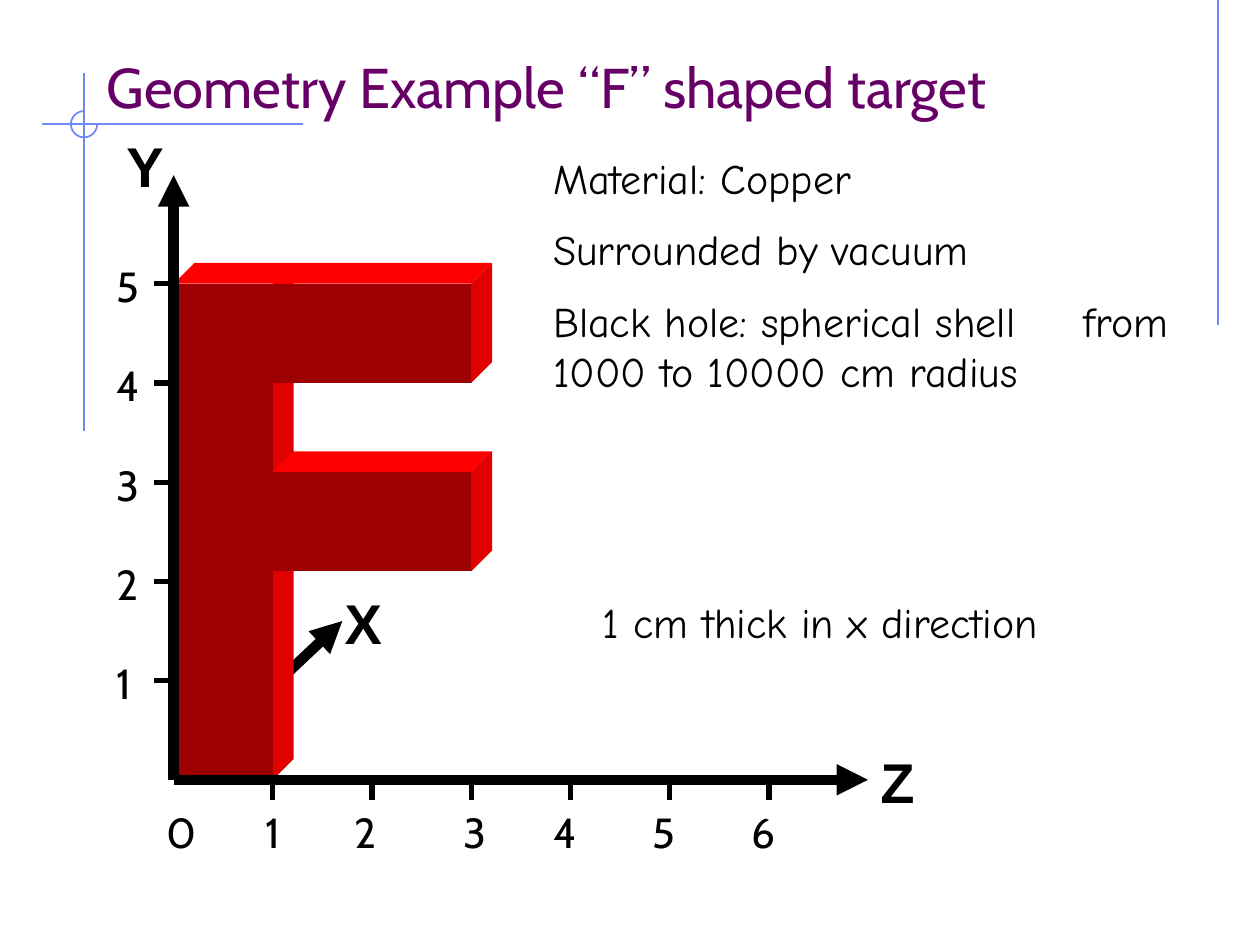
from lxml.etree import SubElement
from pptx import Presentation
from pptx.dml.color import RGBColor
from pptx.enum.shapes import MSO_CONNECTOR, MSO_SHAPE
from pptx.enum.text import MSO_ANCHOR, PP_ALIGN
from pptx.oxml.ns import qn
from pptx.util import Cm, Pt

BLACK = RGBColor(0x00, 0x00, 0x00)
PURPLE = RGBColor(0x66, 0x00, 0x66)
BLUE = RGBColor(0x6F, 0x89, 0xF7)
FRONT_RED = RGBColor(0x9C, 0x00, 0x00)
SIDE_RED = RGBColor(0xE0, 0x00, 0x00)
TOP_RED = RGBColor(0xFF, 0x00, 0x00)

# Axis system in cm: two slide centimetres per unit
ORIGIN_X, ORIGIN_Y = 3.5, 15.72
UNIT = 2
DEPTH = 0.42
TICK = 0.4


def add_line(slide, start, end, color, width, arrow=False):
    line = slide.shapes.add_connector(
        MSO_CONNECTOR.STRAIGHT, *(Cm(value) for value in (*start, *end)))
    line.line.color.rgb = color
    line.line.width = Pt(width)
    if arrow:
        SubElement(line.line._get_or_add_ln(), qn("a:tailEnd"), type="triangle")
    SubElement(line._element.spPr, qn("a:effectLst"))


def add_run(paragraph, text, font, size, color=BLACK, bold=False):
    run = paragraph.add_run()
    run.text = text
    run.font.name = font
    run.font.size = Pt(size)
    run.font.color.rgb = color
    run.font.bold = bold


def add_text(slide, box, lines, font, size, bold=False):
    shape = slide.shapes.add_textbox(*(Cm(value) for value in box))
    frame = shape.text_frame
    frame.word_wrap = True
    for index, text in enumerate(lines):
        paragraph = frame.paragraphs[0] if index == 0 else frame.add_paragraph()
        if index:
            paragraph.space_before = Pt(size / 2)
        add_run(paragraph, text, font, size, bold=bold)
    return frame


def add_face(slide, points, color):
    corners = [(Cm(x), Cm(y)) for x, y in points]
    builder = slide.shapes.build_freeform(*corners[0])
    builder.add_line_segments(corners[1:], close=True)
    shape = builder.convert_to_shape()
    shape.shadow.inherit = False
    shape.fill.solid()
    shape.fill.fore_color.rgb = color
    shape.line.fill.background()


def add_block(slide, z, y, width, height):
    """Draw a solid bar, given in axis units, with front, top and side faces."""
    left, right = (ORIGIN_X + UNIT * value for value in (z, z + width))
    bottom, top = (ORIGIN_Y - UNIT * value for value in (y, y + height))
    back_left, back_right = left + DEPTH, right + DEPTH
    back_top, back_bottom = top - DEPTH, bottom - DEPTH
    add_face(slide, [(left, top), (back_left, back_top),
                     (back_right, back_top), (right, top)], TOP_RED)
    add_face(slide, [(right, top), (back_right, back_top),
                     (back_right, back_bottom), (right, bottom)], SIDE_RED)
    add_face(slide, [(left, top), (right, top),
                     (right, bottom), (left, bottom)], FRONT_RED)


def add_decoration(slide):
    add_line(slide, (24.56, 0), (24.56, 6.55), BLUE, 1)
    add_line(slide, (6.1, 2.5), (0.84, 2.5), BLUE, 1)
    add_line(slide, (1.69, 1.48), (1.69, 8.69), BLUE, 1)
    arc = slide.shapes.add_shape(
        MSO_SHAPE.ARC, Cm(1.43), Cm(2.24), Cm(0.53), Cm(0.53))
    arc.shadow.inherit = False
    # Three quarters of a circle, open at the upper right
    arc.adjustments[0] = 0.0
    arc.adjustments[1] = 270 * 0.6
    arc.fill.background()
    arc.line.color.rgb = BLUE
    arc.line.width = Pt(1)


def add_title(slide):
    title = slide.shapes.title
    title.left, title.top = Cm(1.9), Cm(0.84)
    title.width, title.height = Cm(21.6), Cm(1.7)
    title.text_frame.vertical_anchor = MSO_ANCHOR.BOTTOM
    paragraph = title.text_frame.paragraphs[0]
    paragraph.alignment = PP_ALIGN.LEFT
    add_run(paragraph, "Geometry Example “F” shaped target", "Cabin", 32, PURPLE)


def add_scales(slide):
    for value in range(1, 7):
        x = ORIGIN_X + UNIT * value
        add_line(slide, (x, ORIGIN_Y), (x, ORIGIN_Y + TICK), BLACK, 3)
    for value, left in enumerate((3.1, 5.1, 6.9, 9.1, 10.9, 12.9, 14.9)):
        add_text(slide, (left, 16.13, 1, 1.27), [str(value)], "Cabin", 24)
    for value in range(1, 6):
        y = ORIGIN_Y - UNIT * value
        add_line(slide, (ORIGIN_X, y), (ORIGIN_X - TICK, y), BLACK, 3)
        add_text(slide, (2.1, y - 0.59, 1, 1.27), [str(value)], "Cabin", 24)


def add_notes_on_target(slide):
    frame = add_text(slide, (10.9, 2.95, 13.4, 5.38),
                     ["Material: Copper", "Surrounded by vacuum",
                      "Black hole: spherical shell\tfrom 1000 to 10000 cm radius"],
                     "Comic Neue", 24)
    # Tab stop for the gap in the last statement
    properties = frame.paragraphs[-1]._p.get_or_add_pPr()
    tabs = SubElement(properties, qn("a:tabLst"))
    SubElement(tabs, qn("a:tab"), pos=str(Cm(10.7)), algn="l")
    add_text(slide, (11.9, 11.91, 11, 1.27),
             ["1 cm thick in x direction"], "Comic Neue", 24)


def main():
    presentation = Presentation()
    presentation.slide_width, presentation.slide_height = Cm(25.4), Cm(19.05)
    slide = presentation.slides.add_slide(presentation.slide_layouts[5])
    add_decoration(slide)
    add_title(slide)

    # X axis runs behind the target
    origin = (ORIGIN_X, ORIGIN_Y)
    add_line(slide, origin, (6.9, 12.52), BLACK, 6, arrow=True)

    # F shaped target: stem, upper bar, middle bar
    for block in ((0, 0, 1, 5), (1, 4, 2, 1), (1, 2.1, 2, 1)):
        add_block(slide, *block)

    # Z and Y axes with their names and scales
    add_line(slide, origin, (17.5, ORIGIN_Y), BLACK, 6, arrow=True)
    add_line(slide, origin, (ORIGIN_X, 3.53), BLACK, 6, arrow=True)
    for name, left, top in (("Y", 2.3, 2.52), ("Z", 17.5, 14.94), ("X", 6.7, 11.73)):
        add_text(slide, (left, top, 1.6, 1.6), [name], "Arial", 32, bold=True)
    add_scales(slide)
    add_notes_on_target(slide)
    presentation.save("out.pptx")


if __name__ == "__main__":
    main()
